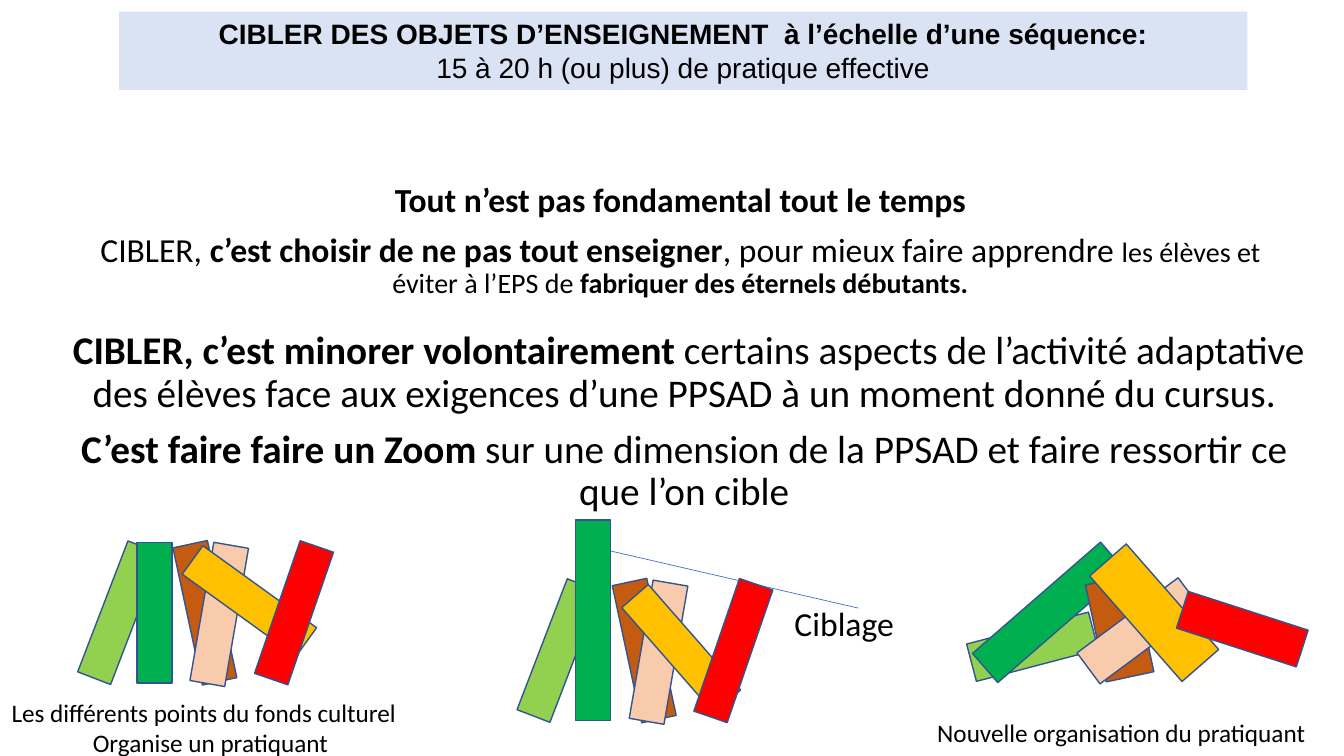
from dataclasses import dataclass

from pptx import Presentation
from pptx.dml.color import RGBColor as RGB
from pptx.enum.shapes import MSO_CONNECTOR as CONN, MSO_SHAPE as SHAPE
from pptx.enum.text import MSO_ANCHOR as ANCHOR, PP_ALIGN as ALIGN
from pptx.oxml.ns import qn
from pptx.util import Inches, Pt
from lxml.etree import SubElement


@dataclass(frozen=True)
class Theme:
    text: str = "000000"
    banner: str = "DAE3F3"
    outline: str = "325491"
    pointer: str = "4472C4"
    heading_font: str = "Arial"
    body_font: str = "Calibri"
    caption: int = 18
    small: int = 20
    medium: int = 24
    large: int = 28


T = Theme()
COLORS = {"light": "92D050", "green": "00B050", "brown": "C55A11",
          "pink": "F8CBAD", "gold": "FFC000", "red": "FF0000"}

# Square grid of 160 columns by 90 rows
COLS, ROWS = 160, 90
CELL = Inches(13.33) / COLS

# Bars, back to front: column, row, columns wide, rows high, rotation
BAR = (4.2, 16.7)
CULTURE = {
    "light": (0, 0, *BAR, 21),
    "green": (4.2, 0, *BAR, 0),
    "brown": (10.2, 0, *BAR, 347.9),
    "pink": (11.9, 0.2, *BAR, 9.8),
    "gold": (15.5, -1.4, *BAR, 305.8),
    "red": (20.8, 0, *BAR, 19),
}
TARGETED = CULTURE | {
    "green": (4.1, -7.2, 4.2, 23.9, 0),
    "gold": (14.6, -0.2, *BAR, 318.8),
}
REORGANISED = {
    "light": (0, 6.7, 4.6, 15, 75.3),
    "green": (2, 0, 4.6, 20.2, 49),
    "brown": (9.8, 6.1, 5.8, 11.8, 347.9),
    "pink": (12.7, 4.8, 4.6, 15, 53.4),
    "gold": (13.9, 1.8, 5.8, 16.7, 318.8),
    "red": (25, 4.6, 4.6, 15, 287.9),
}


def grid(*cells):
    return [round(n * CELL) for n in cells]


def write(tf, paragraphs, font, align=ALIGN.CENTER):
    """Fill a frame; each paragraph is a list of (text, size, bold)."""
    tf.word_wrap = True
    for i, runs in enumerate(paragraphs):
        p = tf.paragraphs[0] if i == 0 else tf.add_paragraph()
        p.alignment = align
        for text, size, bold in runs:
            r = p.add_run()
            r.text = text
            r.font.name, r.font.size, r.font.bold = font, Pt(size), bold
            r.font.color.rgb = RGB.from_string(T.text)


def banner(s, box, paragraphs):
    sp = s.shapes.add_shape(SHAPE.RECTANGLE, *grid(*box))
    sp.shadow.inherit = False
    sp.fill.solid()
    sp.fill.fore_color.rgb = RGB.from_string(T.banner)
    sp.line.fill.background()
    sp.text_frame.vertical_anchor = ANCHOR.TOP
    write(sp.text_frame, paragraphs, T.heading_font)


def body(s, box, paragraphs, indent=0):
    tf = s.shapes.add_textbox(*grid(*box)).text_frame
    write(tf, paragraphs, T.body_font)
    for p in tf.paragraphs:
        p.line_spacing = 0.9
        p.space_before = Pt(10)
        p._p.get_or_add_pPr().set("marL", str(Inches(indent)))


def caption(s, box, lines, size):
    tf = s.shapes.add_textbox(*grid(*box)).text_frame
    write(tf, [[(line, size, False)] for line in lines], T.body_font)
    tf.paragraphs[0].alignment = ALIGN.LEFT


def bar_stack(s, left, top, bars):
    group = s.shapes.add_group_shape()
    for name, (col, row, width, height, angle) in bars.items():
        sp = group.shapes.add_shape(
            SHAPE.RECTANGLE, *grid(left + col, top + row, width, height))
        sp.shadow.inherit = False
        sp.rotation = angle
        sp.fill.solid()
        sp.fill.fore_color.rgb = RGB.from_string(COLORS[name])
        sp.line.color.rgb = RGB.from_string(T.outline)
        sp.line.width = Pt(1)


def pointer(s, start, end):
    line = s.shapes.add_connector(CONN.STRAIGHT, *grid(*start, *end))
    line.line.color.rgb = RGB.from_string(T.pointer)
    line.line.width = Pt(0.5)
    SubElement(line.line._get_or_add_ln(), qn("a:tailEnd"), type="triangle")
    SubElement(line._element.spPr, qn("a:effectLst"))


def main():
    prs = Presentation()
    prs.slide_width, prs.slide_height = grid(COLS, ROWS)
    s = prs.slides.add_slide(prs.slide_layouts[6])

    # Title banner
    banner(s, (14.2, 1.4, 134.3, 9.3), [
        [("CIBLER DES OBJETS D’ENSEIGNEMENT  à l’échelle d’une séquence:", T.small, True)],
        [("15 à 20 h (ou plus) de pratique effective", T.small, False)],
    ])

    # Principle and definition
    body(s, (6.7, 21.2, 148.6, 15.1), [
        [("Tout n’est pas fondamental tout le temps", T.medium, True)],
        [("CIBLER, ", T.medium, False),
         ("c’est choisir de ne pas tout enseigner", T.medium, True),
         (", pour mieux faire apprendre ", T.medium, False),
         ("les élèves et éviter à l’EPS de ", T.small, False),
         ("fabriquer des éternels débutants.", T.small, True)],
    ])
    body(s, (4, 38.8, 154.4, 23.9), [
        [(" CIBLER, c’est minorer volontairement ", T.large, True),
         ("certains aspects de l’activité adaptative des élèves face aux "
          "exigences d’une PPSAD à un moment donné du cursus.", T.large, False)],
        [("C’est faire faire un Zoom ", T.large, True),
         ("sur une dimension de la PPSAD et faire ressortir ce que l’on cible",
          T.large, False)],
    ], indent=0.04)

    # Cultural content
    bar_stack(s, 12.1, 64.6, CULTURE)
    caption(s, (0.2, 82.4, 49.7, 8.5),
            ["Les différents points du fonds culturel", "Organise un pratiquant"],
            T.caption)

    # Targeting
    caption(s, (93.4, 71.2, 17, 6), ["Ciblage"], T.medium)
    pointer(s, (102.2, 72.4), (70.1, 65))
    bar_stack(s, 64.4, 69.1, TARGETED)

    # New organisation
    bar_stack(s, 120.6, 62.8, REORGANISED)
    caption(s, (110.4, 84.8, 47.9, 4.8),
            ["Nouvelle organisation du pratiquant"], T.caption)

    prs.save("out.pptx")


if __name__ == "__main__":
    main()
